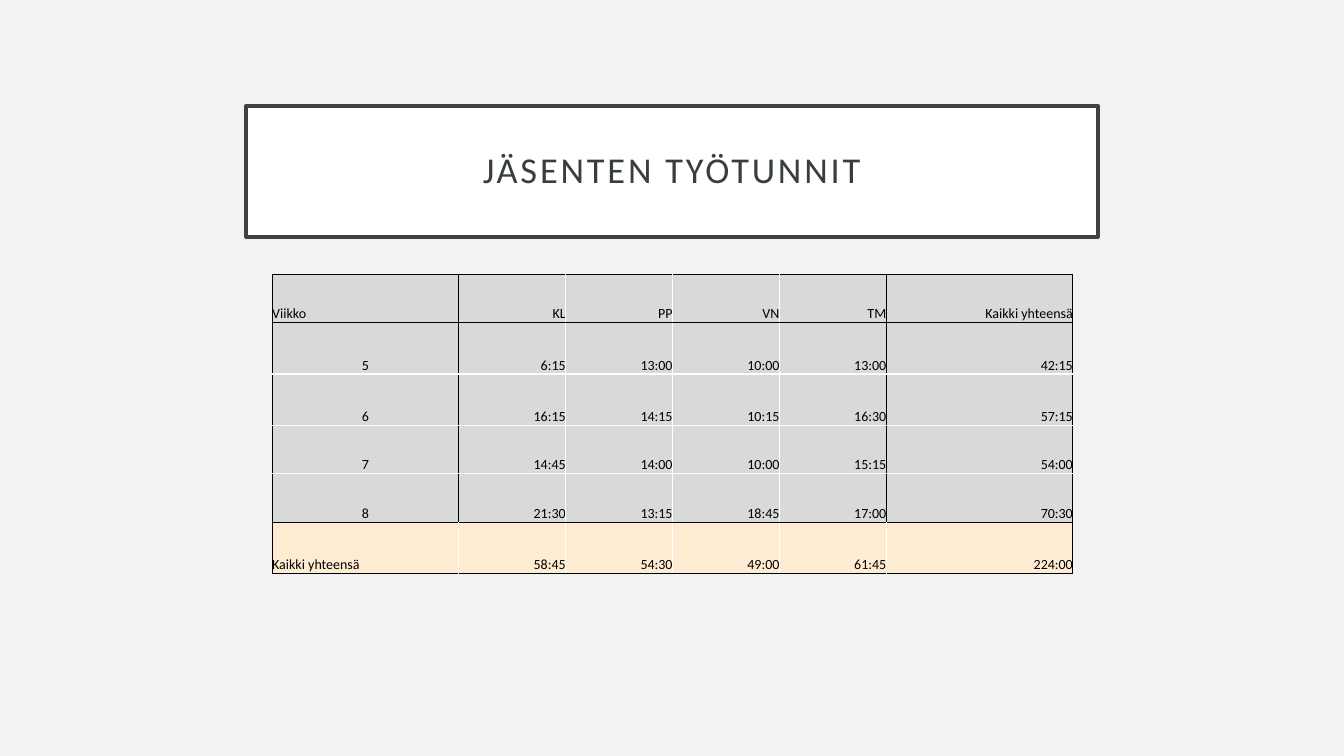
from dataclasses import dataclass

from lxml.etree import SubElement
from pptx import Presentation
from pptx.dml.color import RGBColor
from pptx.enum.text import MSO_ANCHOR as Anchor, MSO_AUTO_SIZE as AutoSize, PP_ALIGN as Align
from pptx.oxml.ns import qn
from pptx.util import Inches, Pt

FONT = "Calibri"
BLACK, WHITE = "000000", "FFFFFF"
COL_WIDTHS = [1.85, 1.06, 1.06, 1.06, 1.06, 1.85]
LAST_COL = len(COL_WIDTHS) - 1


@dataclass
class HoursRow:
    label: str
    hours: list[str]
    height: float
    align: Align = Align.CENTER
    fill: str = "D9D9D9"


ROWS = [
    HoursRow("Viikko", ["KL", "PP", "VN", "TM", "Kaikki yhteensä"], 0.48, Align.LEFT),
    HoursRow("5", ["6:15", "13:00", "10:00", "13:00", "42:15"], 0.51),
    HoursRow("6", ["16:15", "14:15", "10:15", "16:30", "57:15"], 0.51),
    HoursRow("7", ["14:45", "14:00", "10:00", "15:15", "54:00"], 0.48),
    HoursRow("8", ["21:30", "13:15", "18:45", "17:00", "70:30"], 0.48),
    HoursRow("Kaikki yhteensä", ["58:45", "54:30", "49:00", "61:45", "224:00"], 0.51,
             Align.LEFT, "FDECD2"),
]
TOTAL_ROW = len(ROWS) - 1


def rgb(color: str) -> RGBColor:
    return RGBColor.from_string(color)


def style_paragraph(p, size: float, color: str, align: Align) -> None:
    p.alignment = align
    p.font.name = FONT
    p.font.size = Pt(size)
    p.font.color.rgb = rgb(color)


def row_line(edge: int) -> str:
    """Colour of the horizontal line above row number `edge`."""
    return BLACK if edge in (0, 1, TOTAL_ROW, TOTAL_ROW + 1) else WHITE


def col_line(edge: int, row: int) -> str:
    """Colour of the vertical line left of column number `edge`."""
    outer = edge in (0, LAST_COL + 1)
    inner = edge in (1, LAST_COL) and row != TOTAL_ROW
    return BLACK if outer or inner else WHITE


def add_borders(cell, row: int, col: int) -> None:
    sides = {
        "a:lnL": col_line(col, row),
        "a:lnR": col_line(col + 1, row),
        "a:lnT": row_line(row),
        "a:lnB": row_line(row + 1),
    }
    tc_pr = cell._tc.get_or_add_tcPr()
    for tag, color in sides.items():
        ln = SubElement(tc_pr, qn(tag), w=str(Pt(1)))
        fill = SubElement(ln, qn("a:solidFill"))
        SubElement(fill, qn("a:srgbClr"), val=color)


def fill_cell(cell, text: str, align: Align, fill: str) -> None:
    cell.fill.solid()
    cell.fill.fore_color.rgb = rgb(fill)
    cell.vertical_anchor = Anchor.BOTTOM
    cell.margin_left = cell.margin_right = cell.margin_top = cell.margin_bottom = 0
    cell.text = text
    style_paragraph(cell.text_frame.paragraphs[0], 10, BLACK, align)


def add_title(s, text: str) -> None:
    sp = s.shapes.title
    sp.left, sp.top, sp.width, sp.height = map(Inches, (2.44, 1.05, 8.45, 1.3))
    sp.fill.solid()
    sp.fill.fore_color.rgb = rgb(WHITE)
    sp.line.color.rgb = rgb("404040")
    sp.line.width = Pt(2.5)
    tf = sp.text_frame
    tf.word_wrap = True
    tf.auto_size = AutoSize.NONE
    tf.vertical_anchor = Anchor.MIDDLE
    tf.margin_left = tf.margin_right = tf.margin_top = tf.margin_bottom = Inches(0.2)
    p = tf.paragraphs[0]
    p.line_spacing = 0.9
    style_paragraph(p, 26, "383E40", Align.CENTER)
    r = p.add_run()
    r.text = text
    r._r.get_or_add_rPr().set("spc", "200")  # letter spacing of 2 pt


def add_hours_table(s) -> None:
    width, height = sum(COL_WIDTHS), sum(row.height for row in ROWS)
    table = s.shapes.add_table(len(ROWS), len(COL_WIDTHS), Inches(2.7), Inches(2.72),
                               Inches(width), Inches(height)).table
    table.first_row = table.horz_banding = False
    for col, col_width in enumerate(COL_WIDTHS):
        table.columns[col].width = Inches(col_width)
    for i, row in enumerate(ROWS):
        table.rows[i].height = Inches(row.height)
        for j, text in enumerate([row.label, *row.hours]):
            cell = table.cell(i, j)
            add_borders(cell, i, j)
            fill_cell(cell, text, Align.RIGHT if j else row.align, row.fill)


def main() -> None:
    prs = Presentation()
    prs.slide_width, prs.slide_height = Inches(13.33), Inches(7.5)

    # Title Only layout on a light grey background
    s = prs.slides.add_slide(prs.slide_layouts[5])
    s.background.fill.solid()
    s.background.fill.fore_color.rgb = rgb("F2F2F2")

    # Boxed title and the hours by week and member
    add_title(s, "JÄSENTEN TYÖTUNNIT")
    add_hours_table(s)
    prs.save("out.pptx")


if __name__ == "__main__":
    main()
